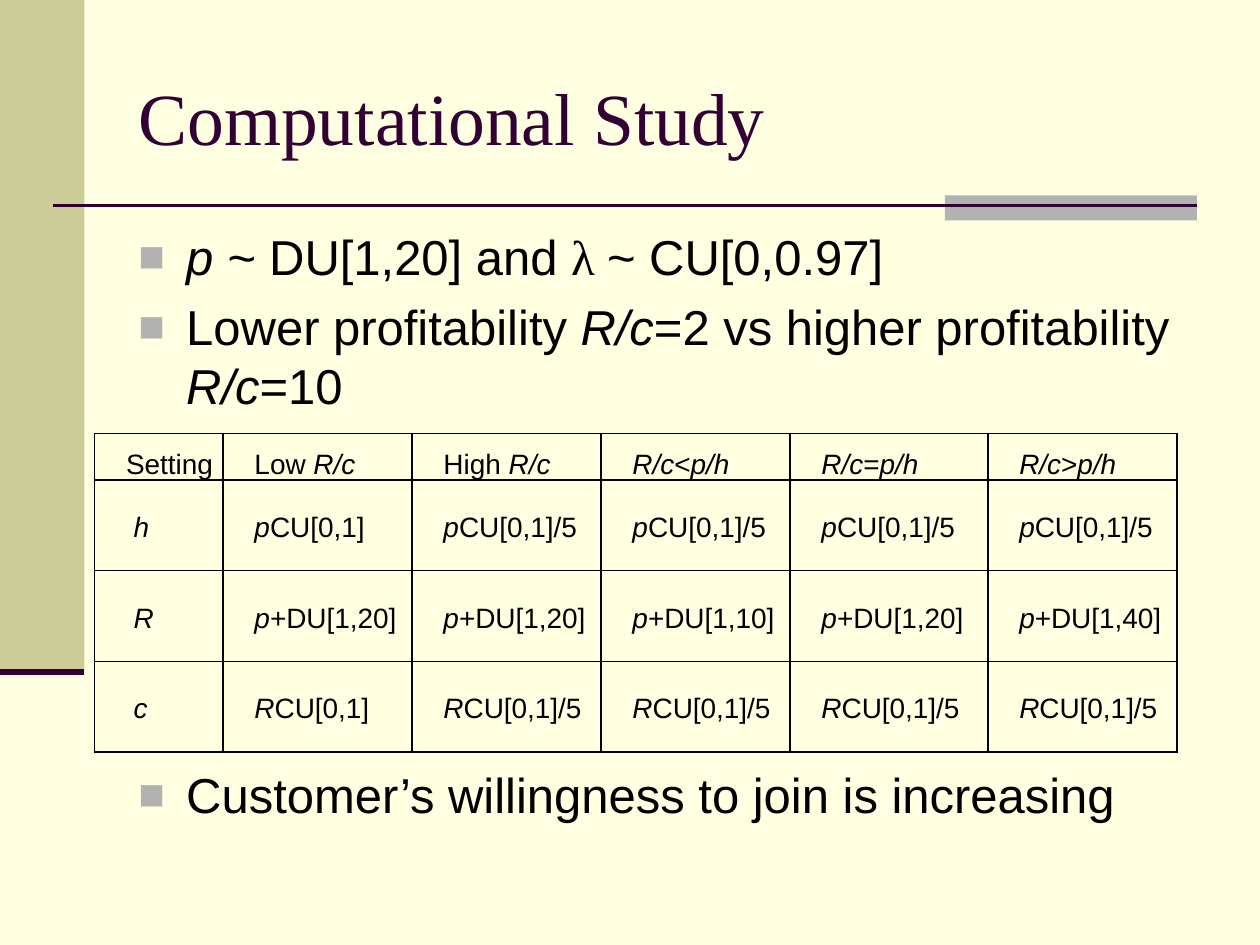
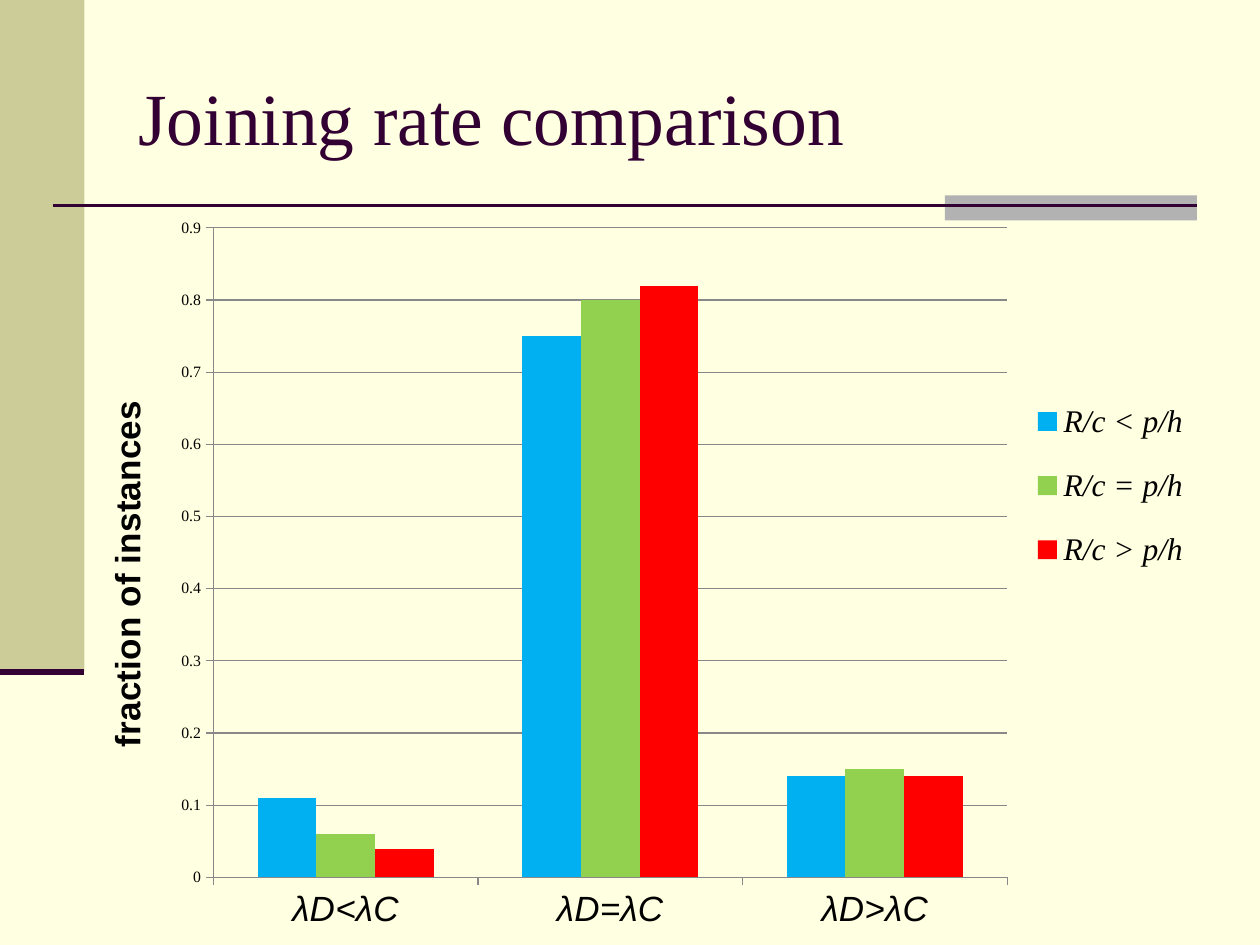
import pptx
import pptx.chart.data
import pptx.dml.color
import pptx.enum.chart
import pptx.enum.shapes
import pptx.enum.text
import pptx.oxml
import pptx.oxml.ns
import pptx.util
from lxml import etree

Inches = pptx.util.Inches
Pt = pptx.util.Pt
RGBColor = pptx.dml.color.RGBColor
qn = pptx.oxml.ns.qn

CREAM = RGBColor(0xFF, 0xFF, 0xE1)
OLIVE = RGBColor(0xCC, 0xCC, 0x99)
GRAY = RGBColor(0xB2, 0xB2, 0xB2)
GRID_GRAY = RGBColor(0x88, 0x88, 0x88)
PLUM = RGBColor(0x33, 0x00, 0x33)
BLACK = RGBColor(0x00, 0x00, 0x00)
BLUE = RGBColor(0x00, 0xB0, 0xF0)
GREEN = RGBColor(0x92, 0xD0, 0x50)
RED = RGBColor(0xFF, 0x00, 0x00)

SANS, SERIF = "Arial", "Times New Roman"
TITLE = {"name": SERIF, "size": Pt(42), "color": PLUM}
BODY = {"name": SANS, "size": Pt(28), "color": BLACK}
CELL = {"name": SANS, "size": Pt(16), "color": BLACK}
CHART = {"name": SERIF, "size": Pt(9), "color": BLACK}
CATEGORY = {"name": SANS, "size": Pt(20), "italic": True}
AXIS_TITLE = {"name": SANS, "size": Pt(20), "bold": True, "color": BLACK}
LEGEND = {"name": SERIF, "size": Pt(18), "italic": True}
ITALIC = {"italic": True}
GREEK = {"name": SERIF}
PLAIN = {}


def apply_format(font, values):
    for name, value in values.items():
        if name == "color":
            font.color.rgb = value
        else:
            setattr(font, name, value)


def add_runs(paragraph, runs, base):
    for text, changes in runs:
        run = paragraph.add_run()
        run.text = text
        apply_format(run.font, {**base, **changes})


def set_indent(paragraph, margin, first_line):
    properties = paragraph._p.get_or_add_pPr()
    properties.set("marL", str(Inches(margin)))
    properties.set("indent", str(Inches(first_line)))
    return properties


def add_bullet(paragraph):
    properties = set_indent(paragraph, 0.38, -0.38)
    color = etree.SubElement(properties, qn("a:buClr"))
    etree.SubElement(color, qn("a:srgbClr"), val=str(GRAY))
    etree.SubElement(properties, qn("a:buSzPct"), val="90000")
    etree.SubElement(properties, qn("a:buFont"), typeface=SANS)
    etree.SubElement(properties, qn("a:buChar"), char="■")


def add_borders(cell):
    properties = cell._tc.get_or_add_tcPr()
    for index, side in enumerate("LRTB"):
        border = etree.Element(qn(f"a:ln{side}"), w=str(Pt(1)))
        fill = etree.SubElement(border, qn("a:solidFill"))
        etree.SubElement(fill, qn("a:srgbClr"), val=str(BLACK))
        properties.insert(index, border)


def set_chart_layout(element, index, box, inner=False):
    """Place a chart part by its left, top, width and height as chart fractions."""
    for old in element.findall(qn("c:layout")):
        element.remove(old)
    layout = etree.Element(qn("c:layout"))
    element.insert(index, layout)
    manual = etree.SubElement(layout, qn("c:manualLayout"))
    if inner:
        etree.SubElement(manual, qn("c:layoutTarget"), val="inner")
    for name in ("xMode", "yMode"):
        etree.SubElement(manual, qn(f"c:{name}"), val="edge")
    for name, value in zip("xywh", box):
        etree.SubElement(manual, qn(f"c:{name}"), val=str(value))


class Deck:
    """Holds the shared style and the slide being built."""

    def __init__(self):
        self.presentation = pptx.Presentation()
        self.presentation.slide_width = Inches(10)
        self.presentation.slide_height = Inches(7.5)
        self.slide = None

    def add_slide(self, title):
        self.slide = self.presentation.slides.add_slide(self.presentation.slide_layouts[6])
        background = self.slide.background.fill
        background.solid()
        background.fore_color.rgb = CREAM
        self.add_band((0, 0, 0.67, 5.33), OLIVE)
        self.add_band((7.5, 1.55, 2, 0.2), GRAY)
        self.add_rule(0.42, 9.5, 1.63, 1.5)
        self.add_rule(0, 0.67, 5.33, 3.5)
        frame = self.add_text_frame((1, 0.3, 8.5, 1.25))
        frame.vertical_anchor = pptx.enum.text.MSO_ANCHOR.MIDDLE
        add_runs(frame.paragraphs[0], [(title, PLAIN)], TITLE)

    def add_band(self, box, color):
        shape = self.slide.shapes.add_shape(
            pptx.enum.shapes.MSO_SHAPE.RECTANGLE, *map(Inches, box))
        shape.shadow.inherit = False
        shape.fill.solid()
        shape.fill.fore_color.rgb = color
        shape.line.fill.background()

    def add_rule(self, left, right, top, width):
        connector = self.slide.shapes.add_connector(
            pptx.enum.shapes.MSO_CONNECTOR.STRAIGHT,
            *map(Inches, (left, top, right, top)))
        connector.line.color.rgb = PLUM
        connector.line.width = Pt(width)
        etree.SubElement(connector._element.spPr, qn("a:effectLst"))

    def add_text_frame(self, box):
        frame = self.slide.shapes.add_textbox(*map(Inches, box)).text_frame
        frame.word_wrap = True
        return frame

    def add_bullets(self, box, items):
        frame = self.add_text_frame(box)
        for index, runs in enumerate(items):
            paragraph = frame.add_paragraph() if index else frame.paragraphs[0]
            paragraph.space_before = Pt(6.5)
            add_bullet(paragraph)
            add_runs(paragraph, runs, BODY)

    def add_table(self, left, top, widths, heights, rows):
        box = (left, top, sum(widths), sum(heights))
        table = self.slide.shapes.add_table(
            len(heights), len(widths), *map(Inches, box)).table
        table.first_row = table.horz_banding = False
        for column, width in zip(table.columns, widths):
            column.width = Inches(width)
        for row, height in zip(table.rows, heights):
            row.height = Inches(height)
        for row_index, row in enumerate(rows):
            for column_index, runs in enumerate(row):
                is_label = row_index > 0 and column_index == 0
                self.fill_cell(table.cell(row_index, column_index), runs,
                               row_index == 0, 0.26 if is_label else 0.2)

    def fill_cell(self, cell, runs, is_header, indent):
        anchors = pptx.enum.text.MSO_ANCHOR
        cell.vertical_anchor = anchors.BOTTOM if is_header else anchors.MIDDLE
        cell.margin_left = cell.margin_right = Inches(0.05)
        cell.margin_top = cell.margin_bottom = 0
        cell.fill.background()
        add_borders(cell)
        paragraph = cell.text_frame.paragraphs[0]
        paragraph.line_spacing = 1.15
        set_indent(paragraph, 0, indent)
        add_runs(paragraph, runs, CELL)

    def add_column_chart(self, box, categories, series, value_title):
        data = pptx.chart.data.CategoryChartData()
        data.categories = categories
        for name, values, _ in series:
            data.add_series(name, values)
        chart = self.slide.shapes.add_chart(
            pptx.enum.chart.XL_CHART_TYPE.COLUMN_CLUSTERED,
            *map(Inches, box), data).chart
        chart.has_title = False
        apply_format(chart.font, CHART)
        plot = chart.plots[0]
        plot.gap_width, plot.overlap = 150, 0
        plot.vary_by_categories = False
        for bars, (_, _, color) in zip(plot.series, series):
            bars.format.fill.solid()
            bars.format.fill.fore_color.rgb = color

        tick_marks = pptx.enum.chart.XL_TICK_MARK
        value_axis, category_axis = chart.value_axis, chart.category_axis
        for axis in (value_axis, category_axis):
            axis.major_tick_mark = tick_marks.OUTSIDE
            axis.minor_tick_mark = tick_marks.NONE
            axis.format.line.color.rgb = GRID_GRAY
        apply_format(category_axis.tick_labels.font, CATEGORY)
        value_axis.minimum_scale, value_axis.maximum_scale = 0, 0.9
        value_axis.major_unit = 0.1
        value_axis.major_gridlines.format.line.color.rgb = GRID_GRAY
        title_frame = value_axis.axis_title.text_frame
        add_runs(title_frame.paragraphs[0], [(value_title, PLAIN)], AXIS_TITLE)
        title_frame._txBody.find(qn("a:bodyPr")).set("rot", "-5400000")

        chart.has_legend = True
        chart.legend.position = pptx.enum.chart.XL_LEGEND_POSITION.RIGHT
        chart.legend.include_in_layout = False
        apply_format(chart.legend.font, LEGEND)
        chart_element = chart._chartSpace.find(qn("c:chart"))
        set_chart_layout(chart_element.find(qn("c:plotArea")), 0,
                         (0.115, 0.032, 0.708, 0.877), inner=True)
        set_chart_layout(chart_element.find(qn("c:legend")), 1,
                         (0.84, 0.23, 0.15, 0.3))


def formula(variable, rest):
    return [(variable, ITALIC), (rest, PLAIN)]


def comparison(sign):
    return [("R/c", ITALIC), (sign, PLAIN), ("p/h", ITALIC)]


def build_study_slide(deck):
    deck.add_slide("Computational Study")
    deck.add_bullets((1, 1.75, 8.5, 1.65), [
        [("p ~ ", ITALIC), ("DU[1,20] and ", PLAIN), ("λ ", GREEK), ("~ CU[0,0.97]", PLAIN)],
        [("Lower profitability ", PLAIN), ("R/c", ITALIC),
         ("=2 vs higher profitability ", PLAIN), ("R/c", ITALIC), ("=10", PLAIN)],
    ])
    header = [[("Setting", PLAIN)]]
    header += [[(level, PLAIN), ("R/c", ITALIC)] for level in ("Low ", "High ")]
    header += [comparison(sign) for sign in "<=>"]
    uniform = ["CU[0,1]"] + ["CU[0,1]/5"] * 4
    revenue = [f"+DU[1,{limit}]" for limit in (20, 20, 10, 20, 40)]
    rows = [header]
    for label, variable, distributions in (
            ("h", "p", uniform), ("R", "p", revenue), ("c", "R", uniform)):
        rows.append([[(label, ITALIC)]] + [formula(variable, rest) for rest in distributions])
    deck.add_table(0.75, 3.44, [1.02, 1.5, 1.5, 1.5, 1.57, 1.5],
                   [0.37] + [0.72] * 3, rows)
    deck.add_bullets((1, 6.02, 8.5, 0.65), [
        [("Customer’s willingness to join is increasing", PLAIN)],
    ])


def build_comparison_slide(deck):
    deck.add_slide("Joining rate comparison")
    deck.add_column_chart(
        (0.67, 1.62, 8.9, 5.88),
        [f"λD{sign}λC" for sign in "<=>"],
        [("R/c < p/h", (0.11, 0.75, 0.14), BLUE),
         ("R/c = p/h", (0.06, 0.8, 0.15), GREEN),
         ("R/c > p/h", (0.04, 0.82, 0.14), RED)],
        "fraction of instances")


def main():
    deck = Deck()
    build_study_slide(deck)
    build_comparison_slide(deck)
    deck.presentation.save("out.pptx")


if __name__ == "__main__":
    main()
